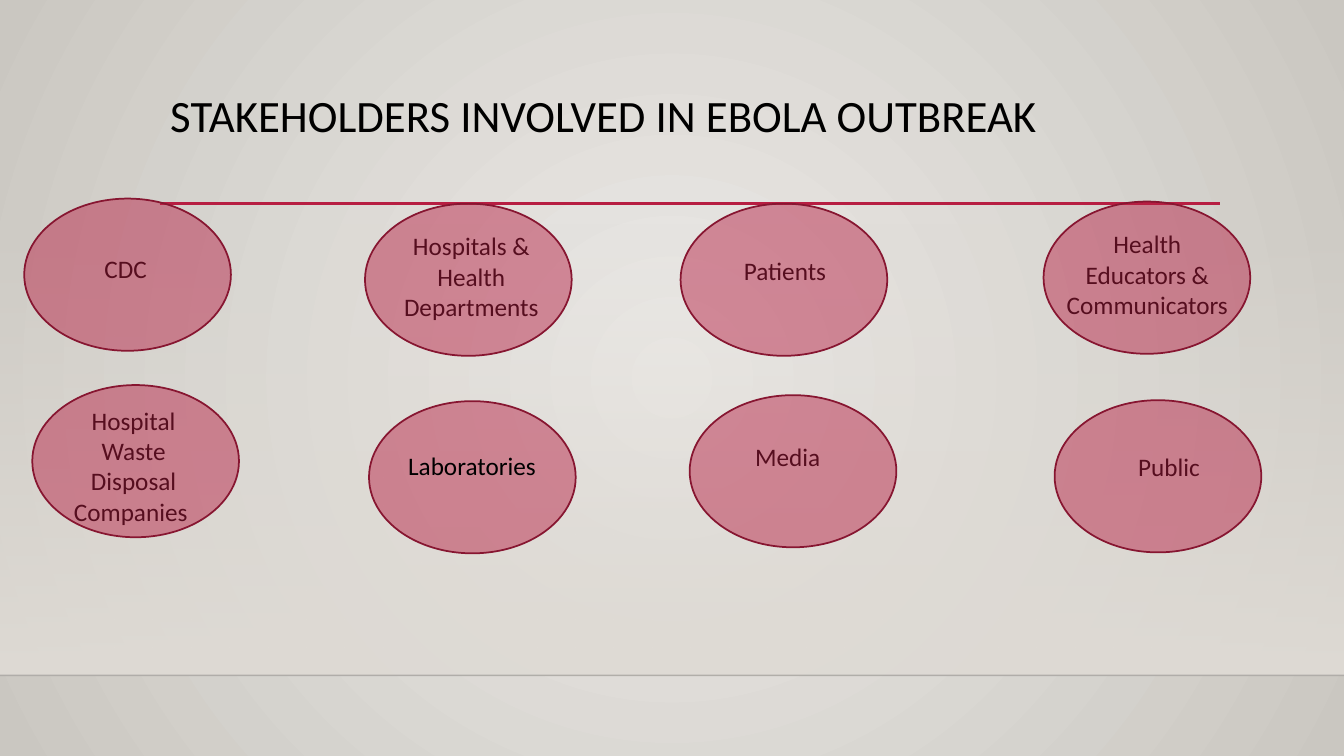
from dataclasses import dataclass
from lxml import etree
from pptx import Presentation
from pptx.dml.color import RGBColor
from pptx.enum.shapes import MSO_CONNECTOR, MSO_SHAPE
from pptx.enum.text import MSO_ANCHOR, PP_ALIGN
from pptx.oxml.ns import qn
from pptx.util import Inches, Pt


@dataclass(frozen=True)
class Theme:
    font: str = "Calibri"
    title_size: int = 32
    label_size: int = 18
    text: str = "000000"
    accent: str = "B71E42"
    outline: str = "871631"
    glow: str = "ECEAE7"
    edge: str = "CAC7C1"
    floor: str = "DFDBD5"
    floor_line: str = "000001"


theme = Theme()


def set_gradient(owner, stops, direction):
    gradient = owner.find(".//" + qn("a:gradFill"))
    for child in list(gradient):
        gradient.remove(child)
    stop_list = etree.SubElement(gradient, qn("a:gsLst"))
    for position, color, opacity in stops:
        stop = etree.SubElement(stop_list, qn("a:gs"), pos=str(position * 1000))
        tint = etree.SubElement(stop, qn("a:srgbClr"), val=color)
        etree.SubElement(tint, qn("a:alpha"), val=str(opacity * 1000))
    gradient.append(direction)


def add_text(left, top, width, height, words, size, align):
    box = slide.shapes.add_textbox(Inches(left), Inches(top), Inches(width), Inches(height))
    frame = box.text_frame
    frame.word_wrap = True
    frame.vertical_anchor = MSO_ANCHOR.TOP
    paragraph = frame.paragraphs[0]
    paragraph.alignment = align
    run = paragraph.add_run()
    run.text = words
    run.font.name = theme.font
    run.font.size = Pt(size)
    run.font.color.rgb = RGBColor.from_string(theme.text)
    return paragraph


prs = Presentation()
prs.slide_width, prs.slide_height = Inches(13.33), Inches(7.5)
slide = prs.slides.add_slide(prs.slide_layouts[6])

slide.background.fill.gradient()
radial = etree.Element(qn("a:path"), path="circle")
etree.SubElement(radial, qn("a:fillToRect"), l="50000", t="50000", r="50000", b="50000")
set_gradient(slide.element, [(0, theme.glow, 100), (100, theme.edge, 100)], radial)

floor = slide.shapes.add_shape(MSO_SHAPE.RECTANGLE, 0, Inches(2.21), Inches(13.33), Inches(4.49))
floor.shadow.inherit = False
floor.line.fill.background()
floor.fill.gradient()
downward = etree.Element(qn("a:lin"), ang="5400000", scaled="0")
set_gradient(floor.element, [(0, theme.floor, 0), (100, theme.floor, 100)], downward)

for start, end, y, color, weight, opacity in [
    (0, 13.33, 6.7, theme.floor_line, 1, 20),
    (1.59, 12.1, 2.02, theme.accent, 2.5, 100),
]:
    rule = slide.shapes.add_connector(
        MSO_CONNECTOR.STRAIGHT, Inches(start), Inches(y), Inches(end), Inches(y))
    rule.line.color.rgb = RGBColor.from_string(color)
    rule.line.width = Pt(weight)
    tint = rule.element.spPr.find(".//" + qn("a:srgbClr"))
    etree.SubElement(tint, qn("a:alpha"), val=str(opacity * 1000))
    etree.SubElement(rule.element.spPr, qn("a:effectLst"))

title = add_text(1.59, 0.88, 10.5, 1.15, "STAKEHOLDERS INVOLVED IN EBOLA OUTBREAK",
                 theme.title_size, PP_ALIGN.LEFT)
title.line_spacing = 0.9

for left, top, width, height, stakeholder, align in [
    (3.66, 2.24, 2.03, 1.01, "Hospitals & Health Departments", PP_ALIGN.CENTER),
    (0.55, 2.46, 1.39, 0.4, "CDC", PP_ALIGN.CENTER),
    (0.57, 3.97, 1.51, 1.31, "Hospital Waste Disposal Companies ", PP_ALIGN.CENTER),
    (7.28, 2.48, 1.51, 0.4, "Patients", PP_ALIGN.LEFT),
    (7.39, 4.33, 1.39, 0.4, "Media", PP_ALIGN.LEFT),
    (11.19, 4.43, 1.13, 0.4, "Public", PP_ALIGN.LEFT),
    (10.43, 2.22, 1.9, 1.01, "Health Educators & Communicators", PP_ALIGN.CENTER),
]:
    add_text(left, top, width, height, stakeholder, theme.label_size, align)

for left, top in [(0.24, 1.97), (3.62, 2.02), (6.75, 2.02), (10.35, 2),
                  (6.84, 3.92), (0.32, 3.82), (10.46, 3.97), (3.66, 3.98)]:
    bubble = slide.shapes.add_shape(
        MSO_SHAPE.OVAL, Inches(left), Inches(top), Inches(2.05), Inches(1.51))
    bubble.shadow.inherit = False
    bubble.fill.solid()
    bubble.fill.fore_color.rgb = RGBColor.from_string(theme.accent)
    tint = bubble.element.spPr.find(qn("a:solidFill") + "/" + qn("a:srgbClr"))
    etree.SubElement(tint, qn("a:alpha"), val="47000")
    bubble.line.color.rgb = RGBColor.from_string(theme.outline)
    bubble.line.width = Pt(1.25)

add_text(3.95, 4.42, 1.66, 0.71, "Laboratories", theme.label_size, PP_ALIGN.LEFT)

prs.save("out.pptx")
